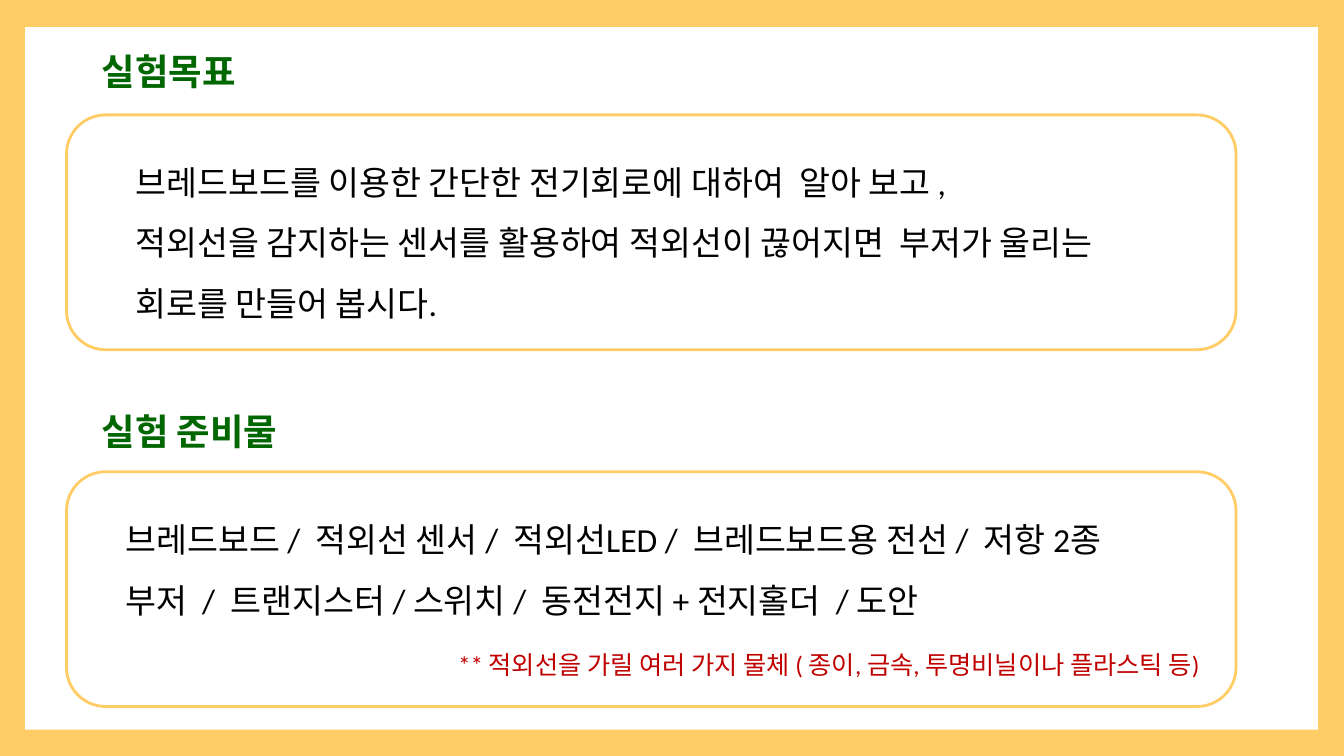
from dataclasses import dataclass

from pptx import Presentation
from pptx.dml.color import RGBColor
from pptx.enum.shapes import MSO_SHAPE
from pptx.enum.text import MSO_ANCHOR, MSO_AUTO_SIZE, PP_ALIGN
from pptx.util import Inches, Pt


@dataclass(frozen=True)
class Theme:
    """Colours, font and type sizes of the slide."""
    font: str = "Calibri"
    amber: RGBColor = RGBColor(0xFF, 0xCC, 0x66)
    white: RGBColor = RGBColor(0xFF, 0xFF, 0xFF)
    green: RGBColor = RGBColor(0x00, 0x66, 0x00)
    black: RGBColor = RGBColor(0x00, 0x00, 0x00)
    red: RGBColor = RGBColor(0xC0, 0x00, 0x00)
    heading: Pt = Pt(26)
    body: Pt = Pt(24)
    note: Pt = Pt(18)


THEME = Theme()
GOAL = [
    "브레드보드를 이용한 간단한 전기회로에 대하여  알아 보고 ,",
    "적외선을 감지하는 센서를 활용하여 적외선이 끊어지면  부저가 울리는",
    "회로를 만들어 봅시다.",
]
MATERIALS = [
    "브레드보드 /  적외선 센서 /  적외선LED /  브레드보드용 전선 /  저항 2종",
    "부저  /  트랜지스터 / 스위치 /  동전전지 + 전지홀더  / 도안",
]
NOTE = "** 적외선을 가릴 여러 가지 물체 ( 종이, 금속, 투명비닐이나 플라스틱 등)"


def style_runs(p, size, color, bold=False):
    """Format every run of a paragraph."""
    for r in p.runs:
        r.font.name = THEME.font
        r.font.size = size
        r.font.bold = bold
        r.font.color.rgb = color


def add_panel(slide):
    """Add the white sheet behind everything else."""
    sp = slide.shapes.add_shape(MSO_SHAPE.RECTANGLE, Inches(0.25), Inches(0.27),
                                Inches(12.82), Inches(6.97))
    sp.shadow.inherit = False
    sp.fill.solid()
    sp.fill.fore_color.rgb = THEME.white
    sp.line.fill.background()
    sp.element.getparent().insert(2, sp.element)


def format_heading(sp, text, top, width):
    """Place a section heading and set its text."""
    sp.left, sp.top = Inches(0.91), Inches(top)
    sp.width, sp.height = Inches(width), Inches(0.48)
    tf = sp.text_frame
    tf.text = text
    tf.word_wrap = True
    tf.auto_size = MSO_AUTO_SIZE.NONE
    tf.vertical_anchor = MSO_ANCHOR.TOP
    tf.margin_left = tf.margin_right = tf.margin_top = tf.margin_bottom = Inches(0.1)
    p = tf.paragraphs[0]
    p.alignment = PP_ALIGN.LEFT
    style_runs(p, THEME.heading, THEME.green, bold=True)


def add_card(slide, top, lines, margin_left):
    """Add a rounded card of text lines and return its text frame."""
    sp = slide.shapes.add_shape(MSO_SHAPE.ROUNDED_RECTANGLE, Inches(0.66), Inches(top),
                                Inches(11.6), Inches(2.33))
    sp.shadow.inherit = False
    sp.fill.solid()
    sp.fill.fore_color.rgb = THEME.white
    sp.line.color.rgb = THEME.amber
    sp.line.width = Pt(2)
    tf = sp.text_frame
    tf.text = "\n".join(lines)
    tf.word_wrap = True
    tf.vertical_anchor = MSO_ANCHOR.MIDDLE
    tf.margin_left = Inches(margin_left)
    for p in tf.paragraphs:
        p.alignment = PP_ALIGN.LEFT
        p.line_spacing = 1.5
        style_runs(p, THEME.body, THEME.black)
    return tf


def add_note(tf, text):
    """Add a small right-aligned closing line to a card."""
    tf.margin_right = Inches(0.25)
    p = tf.add_paragraph()
    p.text = text
    p.alignment = PP_ALIGN.RIGHT
    p.line_spacing = 1.5
    p.space_before = Pt(10)
    style_runs(p, THEME.note, THEME.red)


def main():
    """Build and save the slide."""
    prs = Presentation()
    prs.slide_width, prs.slide_height = Inches(13.33), Inches(7.5)
    slide = prs.slides.add_slide(prs.slide_layouts[5])
    slide.background.fill.solid()
    slide.background.fill.fore_color.rgb = THEME.amber
    add_panel(slide)

    format_heading(slide.shapes.title, "실험목표", 0.39, 1.96)
    add_card(slide, 1.14, GOAL, 0.57)

    materials = slide.shapes.add_textbox(0, 0, 0, 0)
    format_heading(materials, "실험 준비물", 3.96, 2.3)
    add_note(add_card(slide, 4.68, MATERIALS, 0.47), NOTE)
    prs.save("out.pptx")


if __name__ == "__main__":
    main()
